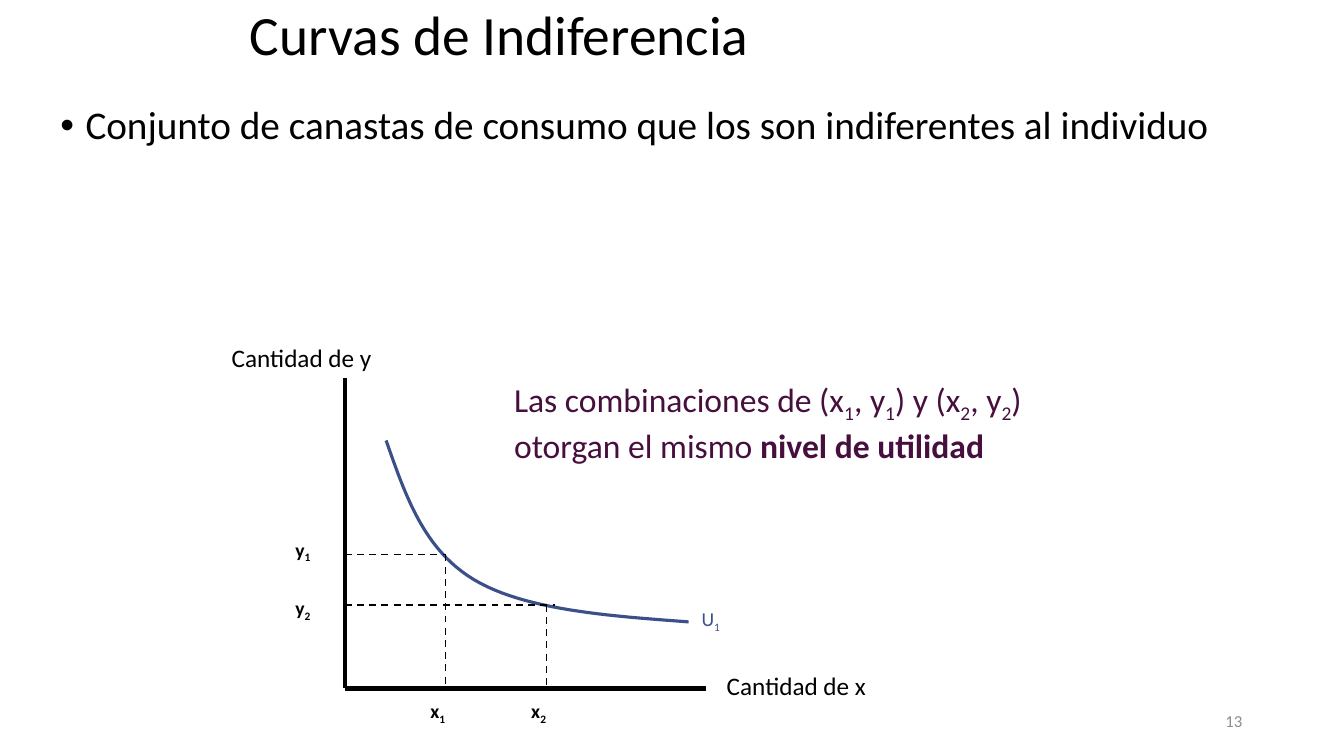
"""Build a slide on indifference curves with a two-good diagram."""
from dataclasses import dataclass

from lxml import etree
from pptx import Presentation
from pptx.dml.color import RGBColor as Color
from pptx.enum.dml import MSO_LINE as Dash
from pptx.enum.shapes import MSO_CONNECTOR as Link
from pptx.enum.text import MSO_ANCHOR as Anchor, PP_ALIGN as Align
from pptx.oxml.ns import qn
from pptx.util import Inches, Pt


@dataclass(frozen=True)
class Theme:
    font: str = "Calibri"
    black: str = "000000"
    gray: str = "8C8C8C"
    blue: str = "3B4F89"
    plum: str = "470F3E"
    title: float = 39.6
    body: float = 28
    note: float = 24
    axis: float = 18
    tick: float = 14
    page: float = 12


theme = Theme()
deck = Presentation()
deck.slide_width, deck.slide_height = Inches(13.33), Inches(7.5)
slide = deck.slides.add_slide(deck.slide_layouts[6])
shapes = slide.shapes


def write(box, lines, size, color=theme.black, bold=False, anchor=Anchor.MIDDLE):
    """Add a text box; every second part between bars is a subscript."""
    frame = shapes.add_textbox(*map(Inches, box)).text_frame
    frame.word_wrap = True
    frame.vertical_anchor = anchor
    for row, line in enumerate(lines):
        para = frame.paragraphs[0] if row == 0 else frame.add_paragraph()
        for spot, part in enumerate(line.split("|")):
            if not part:
                continue
            run = para.add_run()
            run.text = part
            font = run.font
            font.name, font.size, font.bold = theme.font, Pt(size), bold
            font.color.rgb = Color.from_string(color)
            if spot % 2:
                run._r.get_or_add_rPr().set("baseline", "-25000")
    return frame


def draw(start, end, width, dash=None):
    """Draw a straight black line between two points."""
    line = shapes.add_connector(Link.STRAIGHT, *map(Inches, start + end))
    line.line.color.rgb = Color.from_string(theme.black)
    line.line.width = Pt(width)
    if dash:
        line.line.dash_style = dash
    etree.SubElement(line._element.spPr, qn("a:effectLst"))


page = write((9.42, 6.95, 3, 0.4), ["13"], theme.page, theme.gray)
page.paragraphs[0].alignment = Align.RIGHT
title = write((2.38, 0, 8.5, 0.75), ["Curvas de Indiferencia"], theme.title)
title.paragraphs[0].line_spacing = 0.9

body = write((0.5, 1, 12, 1.4),
             ["Conjunto de canastas de consumo que los son indiferentes al individuo"],
             theme.body, anchor=Anchor.TOP)
point = body.paragraphs[0]
point.line_spacing = 0.9
point.space_before = Pt(10)
props = point._p.get_or_add_pPr()
props.set("marL", str(Inches(0.25)))
props.set("indent", str(Inches(-0.25)))
etree.SubElement(props, qn("a:buFont"), typeface="Arial")
etree.SubElement(props, qn("a:buChar"), char="•")

left, base = 3.42, 6.83
draw((left, 3.75), (left, base), 3)
draw((left, base), (7, base), 3)
write((7.11, 6.6, 1.74, 0.4), ["Cantidad de x"], theme.axis)
write((2.2, 3.35, 1.74, 0.4), ["Cantidad de y"], theme.axis)

bends = [((3.83, 4.37), (4.02, 4.91), (4.2, 5.45), (4.7, 5.75)),
         ((4.7, 5.75), (5.2, 6.05), (6.02, 6.11), (6.83, 6.17))]
steps = 24
dots = []
for bend in bends:
    for step in range(1, steps + 1):
        t = step / steps
        mix = ((1 - t) ** 3, 3 * t * (1 - t) ** 2, 3 * t * t * (1 - t), t ** 3)
        dots.append([Inches(sum(m * p[k] for m, p in zip(mix, bend))) for k in (0, 1)])
pen = shapes.build_freeform(*map(Inches, bends[0][0]))
pen.add_line_segments(dots, close=False)
curve = pen.convert_to_shape()
curve.shadow.inherit = False
curve.fill.background()
curve.line.color.rgb = Color.from_string(theme.blue)
curve.line.width = Pt(2.25)

for name, x, y, reach, top in (("1", 4.42, 5.5, 4.42, 5.3), ("2", 5.42, 6, 5.5, 5.88)):
    draw((left, y), (reach, y), 1.25, Dash.DASH)
    draw((x, y), (x, base), 1.25, Dash.DASH)
    write((x - 0.25, 6.9, 0.58, 0.33), [f"x|{name}"], theme.tick, bold=True)
    write((2.83, top, 0.58, 0.33), [f"y|{name}"], theme.tick, bold=True)
write((6.86, 5.99, 0.58, 0.33), ["U|1"], theme.tick, theme.blue)

note = write((5, 3.73, 5.99, 0.91),
             ["Las combinaciones de (x|1|, y|1|) y (x|2|, y|2|)",
              "otorgan el mismo ||nivel de utilidad"],
             theme.note, theme.plum)
note.paragraphs[1].runs[-1].font.bold = True

deck.save("out.pptx")
